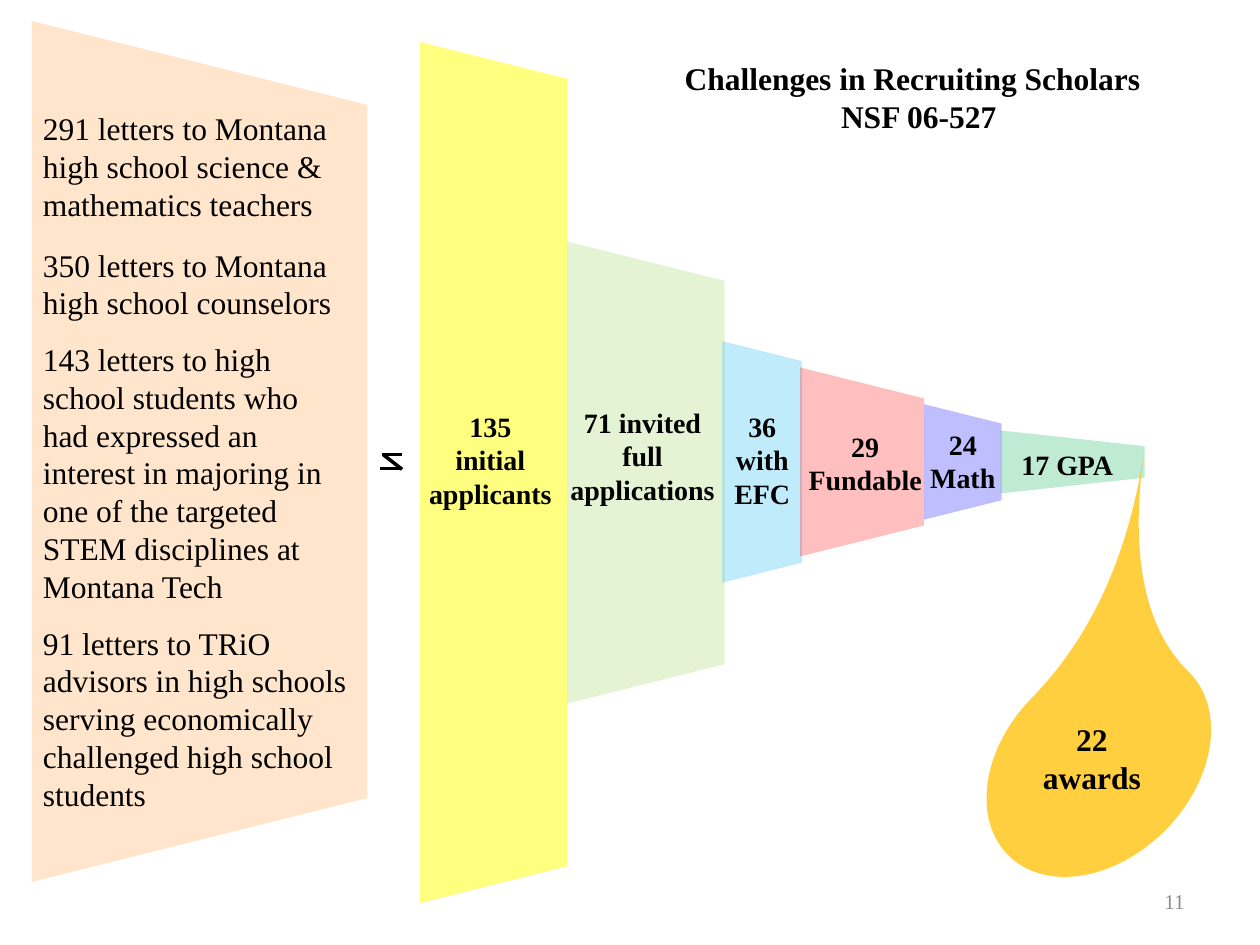
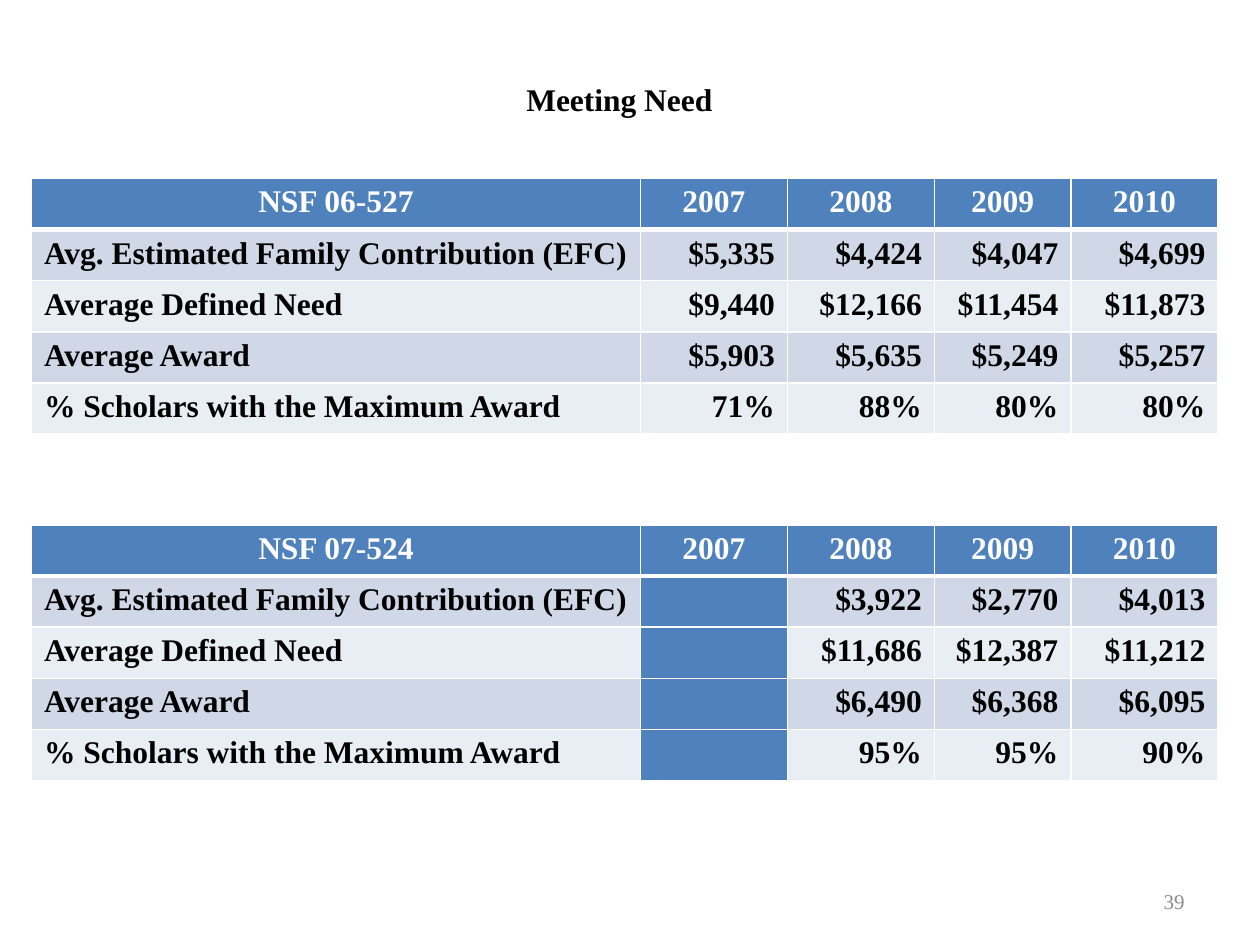
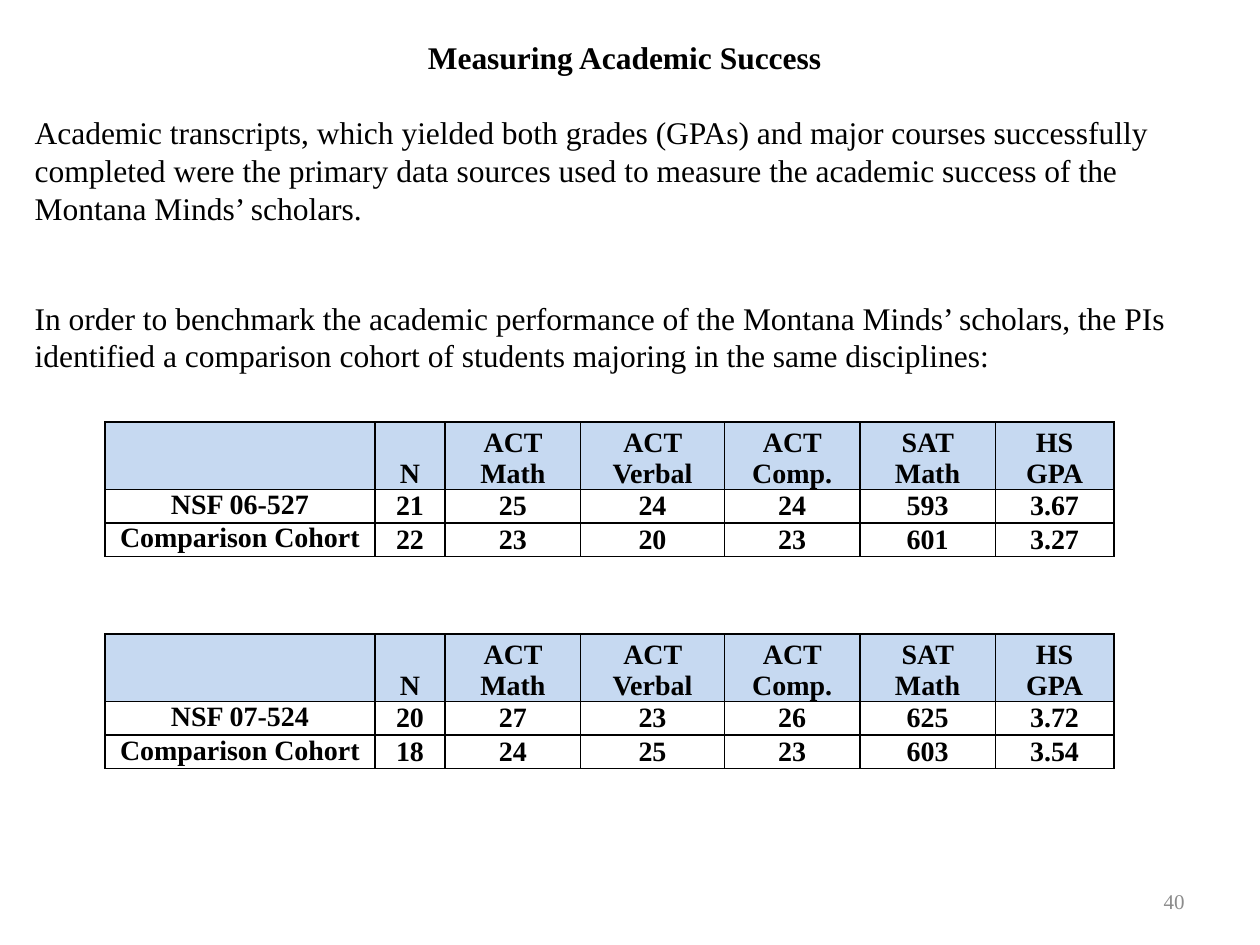
from lxml.etree import SubElement
from pptx import Presentation
from pptx.dml.color import RGBColor
from pptx.enum.shapes import MSO_CONNECTOR, MSO_SHAPE
from pptx.enum.text import MSO_ANCHOR, MSO_AUTO_SIZE, PP_ALIGN
from pptx.oxml import parse_xml
from pptx.oxml.ns import nsdecls, qn
from pptx.util import Inches, Pt

FONT = "Times New Roman"
COLORS = {
    "black": "000000", "white": "FFFFFF", "grey": "8C8C8C",
    "header": "4F81BD", "band": "D0D8E8", "light": "E9EDF4", "pale": "C6D9F1",
    "peach": "FFCC99", "yellow": "FFFF00", "lime": "92D050", "sky": "00B0F0",
    "red": "FF0000", "blue": "0000FF", "green": "00B050", "gold": "FFC000",
}
LEFT, CENTER, RIGHT = PP_ALIGN.LEFT, PP_ALIGN.CENTER, PP_ALIGN.RIGHT
TOP, MIDDLE, BOTTOM = MSO_ANCHOR.TOP, MSO_ANCHOR.MIDDLE, MSO_ANCHOR.BOTTOM


def rgb(name):
    """Return the named colour."""
    return RGBColor.from_string(COLORS[name])


class Deck:
    """Draws styled elements on a grid of 120 columns by 90 rows."""

    def __init__(self):
        """Start an empty 4:3 presentation."""
        self.prs = Presentation()
        self.prs.slide_width, self.prs.slide_height = Inches(10), Inches(7.5)
        self.col, self.row = self.prs.slide_width / 120, self.prs.slide_height / 90

    def box(self, x, y, w, h):
        """Turn grid units into lengths."""
        return (round(x * self.col), round(y * self.row),
                round(w * self.col), round(h * self.row))

    def paragraphs(self, tf, lines, size=18, bold=False, color="black", align=LEFT, gap=0):
        """Fill a text frame with one paragraph for each line."""
        for i, line in enumerate(lines):
            p = tf.paragraphs[0] if i == 0 else tf.add_paragraph()
            p.text = line
            p.alignment = align
            p.space_before = Pt(gap if i else 0)
            p.font.name, p.font.size, p.font.bold = FONT, Pt(size), bold
            p.font.color.rgb = rgb(color)

    def slide(self, title, box, number, layout=5):
        """Start a slide with its title and number."""
        self.s = self.prs.slides.add_slide(self.prs.slide_layouts[layout])
        self.place(self.s.shapes.title, box, title, bold=True, align=CENTER)
        self.text((86, 83.4, 28, 4.8), [str(number)], anchor=MIDDLE,
                  size=12, color="grey", align=RIGHT)

    def place(self, sp, box, lines, **style):
        """Move a placeholder and fill it."""
        sp.left, sp.top, sp.width, sp.height = self.box(*box)
        tf = sp.text_frame
        tf.auto_size, tf.vertical_anchor = MSO_AUTO_SIZE.NONE, TOP
        self.paragraphs(tf, lines, **style)
        return tf

    def body(self, box, lines, gap):
        """Fill the body placeholder with plain paragraphs."""
        tf = self.place(self.s.placeholders[1], box, lines, gap=gap)
        for p in tf.paragraphs:
            pPr = p._p.get_or_add_pPr()
            pPr.set("marL", "0")
            pPr.set("indent", "0")
            pPr.insert_element_before(parse_xml(f"<a:buNone {nsdecls('a')}/>"),
                                      "a:tabLst", "a:defRPr", "a:extLst")

    def text(self, box, lines, anchor=TOP, **style):
        """Add a wrapping text box."""
        tf = self.s.shapes.add_textbox(*self.box(*box)).text_frame
        tf.word_wrap, tf.vertical_anchor = True, anchor
        self.paragraphs(tf, lines, **style)

    def shape(self, kind, box, color, opacity, rotation):
        """Add a see-through preset shape without an outline."""
        sp = self.s.shapes.add_shape(kind, *self.box(*box))
        sp.shadow.inherit = False
        sp.rotation = rotation
        sp.fill.solid()
        sp.fill.fore_color.rgb = rgb(color)
        sp.line.fill.background()
        clr = sp._element.spPr.find(".//" + qn("a:srgbClr"))
        SubElement(clr, qn("a:alpha"), val=str(opacity * 1000))
        return sp

    def funnel(self, x, w, h, color, opacity=25, middle=44):
        """Add a trapezoid that narrows to the right about a middle row."""
        box = (x + (w - h) / 2, middle - w / 2, h, w)
        self.shape(MSO_SHAPE.TRAPEZOID, box, color, opacity, 90)

    def line(self, x1, y1, x2, y2):
        """Add a black line."""
        ends = self.box(x1, y1, x2, y2)
        ln = self.s.shapes.add_connector(MSO_CONNECTOR.STRAIGHT, *ends)
        ln.line.color.rgb, ln.line.width = rgb("black"), Pt(2)
        SubElement(ln._element.spPr, qn("a:effectLst"))

    def borders(self, cell, color, top=1, bottom=1):
        """Draw the four edges of a cell."""
        tcPr = cell._tc.get_or_add_tcPr()
        for i, (side, width) in enumerate(zip("LRTB", (1, 1, top, bottom))):
            tcPr.insert(i, parse_xml(
                f'<a:ln{side} {nsdecls("a")} w="{int(Pt(width))}"><a:solidFill>'
                f'<a:srgbClr val="{COLORS[color]}"/></a:solidFill></a:ln{side}>'))

    def table(self, x, y, cols, rows, data, styler):
        """Add a table whose cells are styled by a function."""
        box = self.box(x, y, sum(cols), sum(rows))
        tbl = self.s.shapes.add_table(len(rows), len(cols), *box).table
        for c, w in enumerate(cols):
            tbl.columns[c].width = round(w * self.col)
        for r, h in enumerate(rows):
            tbl.rows[r].height = round(h * self.row)
            for c, value in enumerate(data[r]):
                styler(tbl.cell(r, c), r, c, value)

    def need_cell(self, cell, r, c, value):
        """Style a cell of a banded need table."""
        head = r == 0
        fill = "header" if head or not value else ("light", "band")[r % 2]
        cell.fill.solid()
        cell.fill.fore_color.rgb = rgb(fill)
        self.borders(cell, "white", 3 if r == 1 else 1, 3 if head else 1)
        self.paragraphs(cell.text_frame, [value], bold=True,
                        color="white" if head else "black",
                        align=CENTER if head else RIGHT if c else LEFT)

    def score_cell(self, cell, r, c, value):
        """Style a cell of a ruled score table."""
        cell.fill.solid()
        cell.fill.fore_color.rgb = rgb("white" if r else "pale")
        cell.margin_left = cell.margin_right = Inches(0.07)
        cell.margin_top = cell.margin_bottom = 0
        cell.vertical_anchor = BOTTOM if r == 0 else MIDDLE if c else TOP
        self.borders(cell, "black")
        self.paragraphs(cell.text_frame, [value], size=16, bold=True, align=CENTER)


def recruiting(d):
    """Draw the recruiting funnel."""
    d.slide(["Challenges in Recruiting Scholars", "NSF 06-527"], (64, 5, 47, 8.5), 11)
    d.s.shapes.title.text_frame.paragraphs[0].alignment = LEFT
    d.funnel(3, 32, 82, "peach", 50, 43)
    letters = [
        (9.8, 31, 12.1, "291 letters to Montana high school science & mathematics teachers"),
        (22.8, 35, 8.5, "350 letters to Montana high school counselors"),
        (31.8, 31, 26.6, "143 letters to high school students who had expressed an interest "
                         "in majoring in one of the targeted STEM disciplines at Montana Tech"),
        (58.8, 33, 19.4, "91 letters to TRiO advisors in high schools serving "
                         "economically challenged high school students"),
    ]
    for y, w, h, words in letters:
        d.text((2.9, y, w, h), [words])

    stages = [
        ((40, 14, 82, "yellow", 50, 45), (39.2, 38.4, 15, 10.9), ["135", "initial applicants"]),
        ((54, 15, 44, "lime", 25, 45), (52.7, 38, 17, 10.9), ["71 invited", "full", "applications"]),
        ((68.8, 7.6, 23, "sky"), (67.4, 38.4, 10.4, 10.9), ["36 with EFC"]),
        ((76.2, 11.8, 18, "red"), (75.4, 40.3, 14, 7.7), ["29 Fundable"]),
        ((88, 7.4, 11, "blue"), (87.4, 40.1, 8.6, 7.7), ["24 Math"]),
        ((95.3, 13.7, 6, "green"), (95.3, 42, 12.7, 4.4), ["17 GPA"]),
    ]
    for trapezoid, box, words in stages:
        d.funnel(*trapezoid)
        d.text(box, words, size=16, bold=True, align=CENTER)

    for ends in ((38.3, 43.3, 36.4, 43.3), (38.2, 44.6, 36.2, 44.6), (38.3, 44.7, 36.5, 43.3)):
        d.line(*ends)
    drop = d.shape(MSO_SHAPE.TEAR, (92.4, 63.8, 24.5, 17.9), "gold", 75, 314.4)
    drop.adjustments[0] = 2
    d.text((98, 68, 12, 8.5), ["22 awards"], bold=True, align=CENTER)


def meeting_need(d):
    """Draw the two need tables."""
    d.slide(["Meeting Need"], (3, 7, 112, 5), 39)
    labels = ["Avg. Estimated Family Contribution (EFC)", "Average Defined Need",
              "Average Award", "% Scholars with the Maximum Award"]
    grants = {
        "NSF 06-527": [["$5,335", "$4,424", "$4,047", "$4,699"],
                       ["$9,440", "$12,166", "$11,454", "$11,873"],
                       ["$5,903", "$5,635", "$5,249", "$5,257"],
                       ["71%", "88%", "80%", "80%"]],
        "NSF 07-524": [["", "$3,922", "$2,770", "$4,013"],
                       ["", "$11,686", "$12,387", "$11,212"],
                       ["", "$6,490", "$6,368", "$6,095"],
                       ["", "95%", "95%", "90%"]],
    }
    for i, (grant, values) in enumerate(grants.items()):
        data = [[grant, "2007", "2008", "2009", "2010"]]
        data += [[label, *row] for label, row in zip(labels, values)]
        d.table(3, 17 + 33 * i, [58, 14, 14, 13, 14], [4.87] * 5, data, d.need_cell)


def academic_success(d):
    """Draw the cohort comparison tables."""
    d.slide(["Measuring Academic Success"], (2, 3, 115, 5), 40, layout=1)
    d.body((2.1, 10.2, 115, 26), [
        "Academic transcripts, which yielded both grades (GPAs) and major courses "
        "successfully completed were the primary data sources used to measure the "
        "academic success of the Montana Minds’ scholars.",
        "In order to benchmark the academic performance of the Montana Minds’ scholars, "
        "the PIs identified a comparison cohort of students majoring in the same "
        "disciplines:"], gap=41)
    head = ["", "N", "ACT Math", "ACT Verbal", "ACT Comp.", "SAT Math", "HS GPA"]
    cohorts = [
        [["NSF 06-527", "21", "25", "24", "24", "593", "3.67"],
         ["Comparison Cohort", "22", "23", "20", "23", "601", "3.27"]],
        [["NSF 07-524", "20", "27", "23", "26", "625", "3.72"],
         ["Comparison Cohort", "18", "24", "25", "23", "603", "3.54"]],
    ]
    cols = [25.7, 6.7, 12.9, 13.7, 12.9, 12.9, 11.3]
    for i, rows in enumerate(cohorts):
        d.table(10, 40.2 + 20.2 * i, cols, [6.4, 3.2, 3.2], [head, *rows], d.score_cell)


def main():
    """Build and save the slides."""
    d = Deck()
    for draw in (recruiting, meeting_need, academic_success):
        draw(d)
    d.prs.save("out.pptx")


if __name__ == "__main__":
    main()
